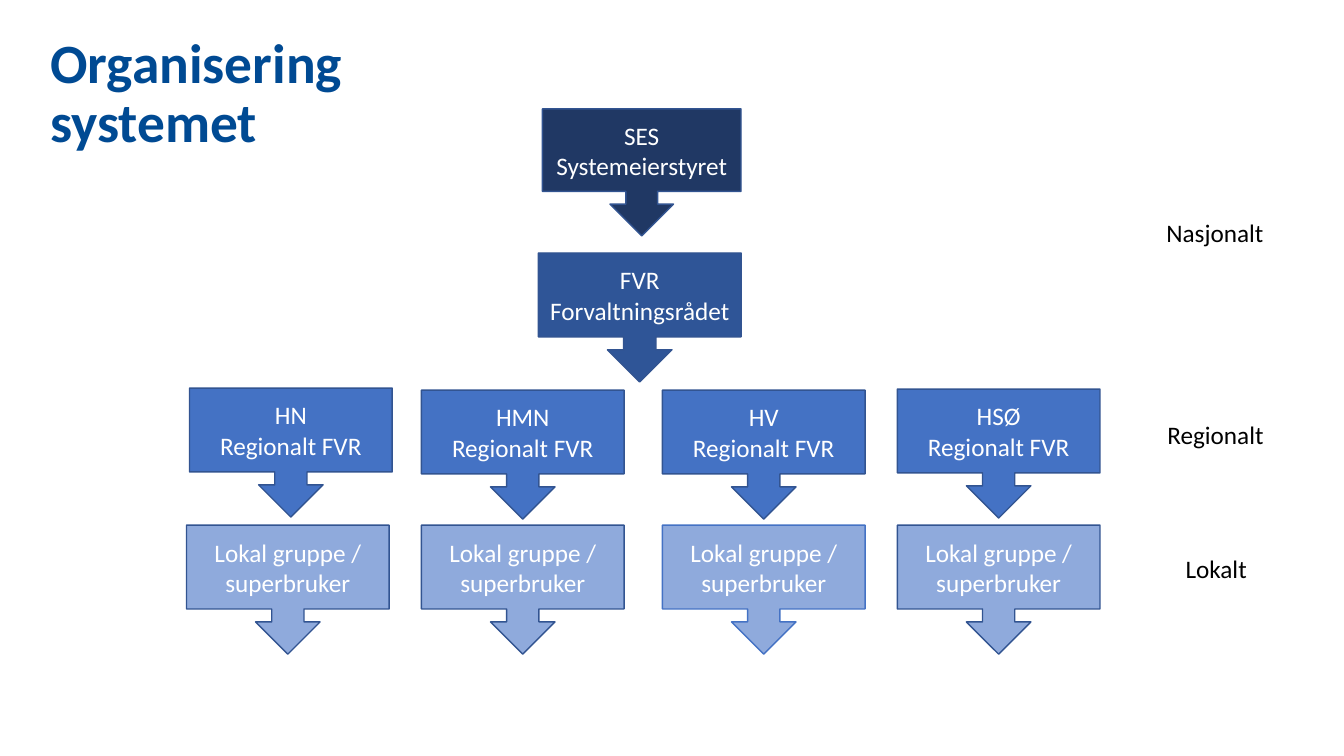
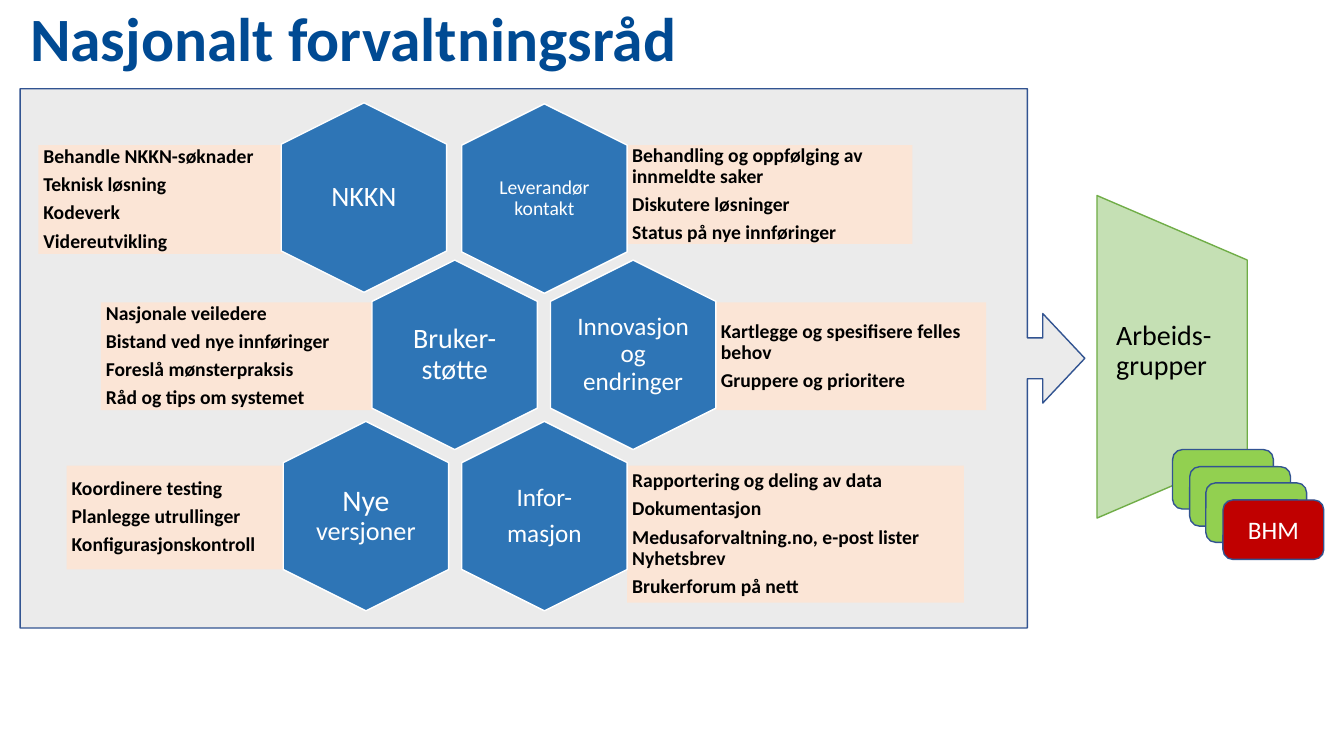
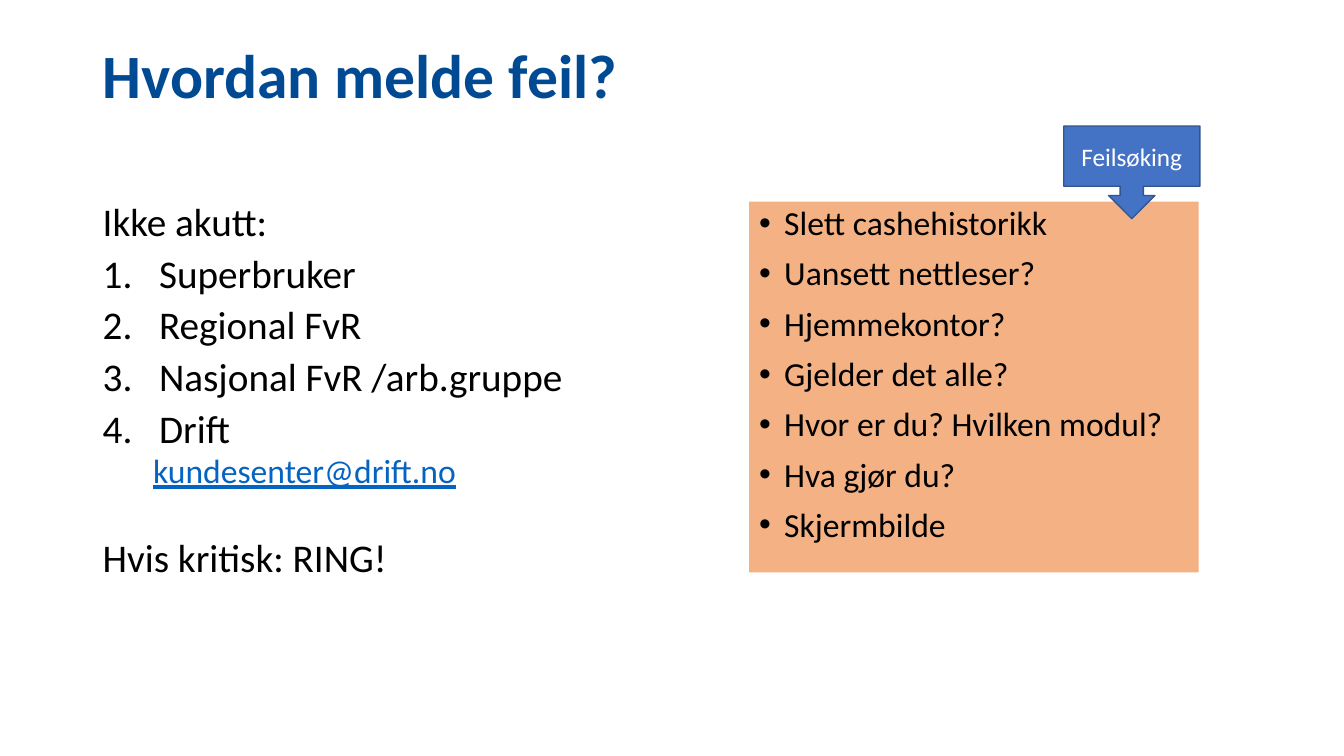
import pptx
import pptx.dml.color
import pptx.enum.shapes
import pptx.enum.text
import pptx.oxml.ns
import pptx.util
from lxml import etree

PX = 9144  # one px is a hundredth of an inch
FONT = "Calibri"
BLACK, WHITE = "000000", "FFFFFF"
TITLE_BLUE, OUTLINE = "004A93", "325491"
NAVY, DARK_BLUE, BLUE, PALE_BLUE = "203864", "2F5597", "4472C4", "8FAADC"
HEX_BLUE, PEACH, ORANGE, GREY = "2E75B6", "FBE5D6", "F4B183", "D9D9D9"
PALE_GREEN, GREEN, LIME, RED = "C5E0B4", "70AD47", "92D050", "C00000"
LINK = "0563C1"

SHAPE = pptx.enum.shapes.MSO_SHAPE
ANCHOR = pptx.enum.text.MSO_ANCHOR
ALIGN = pptx.enum.text.PP_ALIGN


def px(*lengths):
    return [pptx.util.Emu(round(length * PX)) for length in lengths]


def paint(color_holder, color):
    """Give a fill or a font the colour of a hex string."""
    if hasattr(color_holder, "solid"):
        color_holder.solid()
        color_holder = color_holder.fore_color
    else:
        color_holder = color_holder.color
    color_holder.rgb = pptx.dml.color.RGBColor.from_string(color)


def set_bullet(paragraph, bullet, left, indent):
    properties = paragraph._p.get_or_add_pPr()
    properties.set("marL", str(px(left)[0]))
    properties.set("indent", str(px(indent)[0]))
    if bullet == "1.":
        tag, attributes = "a:buAutoNum", {"type": "arabicPeriod"}
    elif bullet:
        font = etree.SubElement(properties, pptx.oxml.ns.qn("a:buFont"))
        font.set("typeface", "Arial")
        tag, attributes = "a:buChar", {"char": bullet}
    else:
        tag, attributes = "a:buNone", {}
    etree.SubElement(properties, pptx.oxml.ns.qn(tag), attributes)


def write(frame, lines, size=18, color=BLACK, bold=False, underline=False,
          align=ALIGN.LEFT, spacing=1.0, before=0, after=0, bullet=None,
          left=0, indent=0):
    """Append one paragraph per line; a line is a string or (text, size) runs."""
    for line in lines:
        is_first = not frame.paragraphs[0].runs
        paragraph = frame.paragraphs[0] if is_first else frame.add_paragraph()
        set_bullet(paragraph, bullet, left, indent)
        paragraph.alignment = align
        paragraph.line_spacing = spacing
        paragraph.space_before = pptx.util.Pt(0 if is_first else before)
        paragraph.space_after = pptx.util.Pt(after)
        for text, run_size in [(line, size)] if isinstance(line, str) else line:
            run = paragraph.add_run()
            run.text = text
            run.font.name = FONT
            run.font.size = pptx.util.Pt(run_size)
            run.font.bold = bold
            run.font.underline = underline
            paint(run.font, color)


def set_frame(frame, insets=(10, 5, 10, 5), anchor=ANCHOR.TOP, wrap=True):
    frame.word_wrap = wrap
    frame.vertical_anchor = anchor
    (frame.margin_left, frame.margin_top,
     frame.margin_right, frame.margin_bottom) = px(*insets)


def style(shape, fill, line=None):
    shape.shadow.inherit = False
    paint(shape.fill, fill)
    if line:
        paint(shape.line.fill, line)
        shape.line.width = pptx.util.Pt(1)
    else:
        shape.line.fill.background()


def add_text_box(slide, box, lines, wrap=True, **text_format):
    frame = slide.shapes.add_textbox(*px(*box)).text_frame
    set_frame(frame, wrap=wrap)
    write(frame, lines, **text_format)
    return frame


def add_title(slide, box, text, size=44):
    add_text_box(slide, box, [text], size=size, color=TITLE_BLUE, bold=True,
                 spacing=0.9)


def add_block(slide, kind, box, fill, line=None):
    block = slide.shapes.add_shape(kind, *px(*box))
    style(block, fill, line)
    return block


def add_label_block(slide, kind, box, lines, fill, line=OUTLINE):
    """Add a preset shape with centred white text."""
    frame = add_block(slide, kind, box, fill, line).text_frame
    set_frame(frame, anchor=ANCHOR.MIDDLE)
    write(frame, lines, color=WHITE, align=ALIGN.CENTER)


def add_outline(slide, points, fill, line):
    builder = slide.shapes.build_freeform(*points[0], scale=float(PX))
    builder.add_line_segments(points[1:], close=True)
    outline = builder.convert_to_shape()
    style(outline, fill, line)
    return outline


def add_hexagon(slide, left, top, lines, size, insets):
    width, height, shoulder = 164, 188, 41
    right, middle, bottom = left + width, left + width // 2, top + height
    points = [(middle, top), (right, top + shoulder), (right, bottom - shoulder),
              (middle, bottom), (left, bottom - shoulder), (left, top + shoulder)]
    frame = add_outline(slide, points, HEX_BLUE, WHITE).text_frame
    set_frame(frame, insets * 2, ANCHOR.MIDDLE)
    write(frame, lines, size=size, color=WHITE, align=ALIGN.CENTER,
          spacing=0.9, after=0.35 * size)


def add_note(slide, box, lines):
    frame = add_block(slide, SHAPE.RECTANGLE, box, PEACH).text_frame
    set_frame(frame, (5, 5, 5, 5), ANCHOR.MIDDLE)
    write(frame, lines, size=14, bold=True, spacing=0.9, after=4.9)


def build_organisation(slide):
    add_title(slide, (40, 30, 334, 68), "Organisering systemet", 39.6)
    for left, top, width, level in [(1147, 211, 117, "Nasjonalt"),
                                    (1148, 411, 117, "Regionalt"),
                                    (1166, 544, 81, "Lokalt")]:
        add_text_box(slide, (left, top, width, 40), [level], wrap=False)

    callout = SHAPE.DOWN_ARROW_CALLOUT
    add_label_block(slide, callout, (538, 108, 197, 126),
                    ["SES", "Systemeierstyret"], NAVY)
    add_label_block(slide, callout, (534, 251, 201, 128),
                    ["FVR", "Forvaltningsrådet"], DARK_BLUE)
    for region, left, top, local_left, local_line in [
            ("HN", 188, 385, 185, OUTLINE), ("HMN", 418, 387, 418, OUTLINE),
            ("HV", 657, 387, 657, BLUE), ("HSØ", 890, 386, 890, OUTLINE)]:
        add_label_block(slide, callout, (left, top, 201, 128),
                        [region, "Regionalt FVR"], BLUE)
        add_label_block(slide, callout, (local_left, 521, 201, 128),
                        ["Lokal gruppe / superbruker"], PALE_BLUE, local_line)


def build_council(slide):
    council = add_block(slide, SHAPE.RIGHT_ARROW_CALLOUT, (20, 88, 1056, 535),
                        GREY, OUTLINE)
    for index, value in enumerate([0.076, 0.083, 0.078, 0.946]):
        council.adjustments[index] = value
    fill_color = council.fill._xPr.find(".//" + pptx.oxml.ns.qn("a:srgbClr"))
    etree.SubElement(fill_color, pptx.oxml.ns.qn("a:alpha"), val="50000")
    add_title(slide, (20, 3, 855, 100), "Nasjonalt forvaltningsråd")

    for box, lines in [
            ((38, 144, 243, 108), ["Behandle NKKN-søknader", "Teknisk løsning",
                                   "Kodeverk", "Videreutvikling"]),
            ((622, 144, 283, 98), ["Behandling og oppfølging av innmeldte saker",
                                   "Diskutere løsninger",
                                   "Status på nye innføringer"]),
            ((100, 300, 269, 107), ["Nasjonale veiledere",
                                    "Bistand ved nye innføringer",
                                    "Foreslå mønsterpraksis",
                                    "Råd og tips om systemet"]),
            ((710, 300, 268, 107), ["Kartlegge og spesifisere felles behov",
                                    "Gruppere og prioritere"]),
            ((66, 462, 215, 103), ["Koordinere testing", "Planlegge utrullinger",
                                   "Konfigurasjonskontroll"]),
            ((622, 462, 334, 136), ["Rapportering og deling av data",
                                    "Dokumentasjon",
                                    "Medusaforvaltning.no, e-post lister Nyhetsbrev",
                                    "Brukerforum på nett"])]:
        add_note(slide, box, lines)

    narrow, wide = (32, 35), (26, 29)
    for left, top, lines, size, insets in [
            (279, 102, ["NKKN"], 20, wide),
            (458, 103, ["Leverandør kontakt"], 14, narrow),
            (369, 258, ["Bruker- støtte"], 20, narrow),
            (546, 258, ["Innovasjon og endringer"], 18, wide),
            (281, 418, [[("Nye ", 21.3), ("versjoner", 18.7)]], 20, wide),
            (458, 418, ["Infor-", "masjon"], 18, narrow)]:
        add_hexagon(slide, left, top, lines, size, insets)

    groups = add_outline(slide, [(1088, 514), (1088, 194), (1237, 258), (1237, 450)],
                         PALE_GREEN, GREEN).text_frame
    set_frame(groups, (19, 125, 20, 49))
    write(groups, ["Arbeids-grupper"], size=20, spacing=0.9)

    for step in range(4):
        offset = round(step * 50 / 3)
        card = (1163 + offset, 446 + offset, 100, 59)
        if step < 3:
            add_block(slide, SHAPE.ROUNDED_RECTANGLE, card, LIME, OUTLINE)
        else:
            add_label_block(slide, SHAPE.ROUNDED_RECTANGLE, card, ["BHM"], RED)


def build_error_report(slide):
    add_title(slide, (92, 40, 1150, 145), "Hvordan melde feil?")
    body = {"size": 28, "spacing": 0.8, "before": 10}
    steps = add_text_box(slide, (92, 200, 481, 400), ["Ikke akutt:"], **body)
    write(steps, ["Superbruker", "Regional FvR", "Nasjonal FvR /arb.gruppe", "Drift"],
          bullet="1.", left=56, indent=-56, **body)
    write(steps, ["kundesenter@drift.no"], size=24, color=LINK, underline=True,
          spacing=0.8, before=5, left=50)
    write(steps, ["Hvis kritisk: RING!"], **{**body, "before": 37})

    checklist = add_block(slide, SHAPE.RECTANGLE, (743, 200, 446, 368),
                          ORANGE).text_frame
    set_frame(checklist)
    write(checklist, ["Slett cashehistorikk", "Uansett nettleser?", "Hjemmekontor?",
                      "Gjelder det alle?", "Hvor er du? Hvilken modul?",
                      "Hva gjør du?", "Skjermbilde"],
          size=24, spacing=0.9, before=10, bullet="•", left=25, indent=-25)
    add_label_block(slide, SHAPE.DOWN_ARROW_CALLOUT, (1055, 125, 135, 92),
                    ["Feilsøking"], BLUE)


def main():
    deck = pptx.Presentation()
    deck.slide_width, deck.slide_height = px(1333, 750)
    blank = deck.slide_layouts[6]
    for build in (build_organisation, build_council, build_error_report):
        build(deck.slides.add_slide(blank))
    deck.save("out.pptx")


if __name__ == "__main__":
    main()
